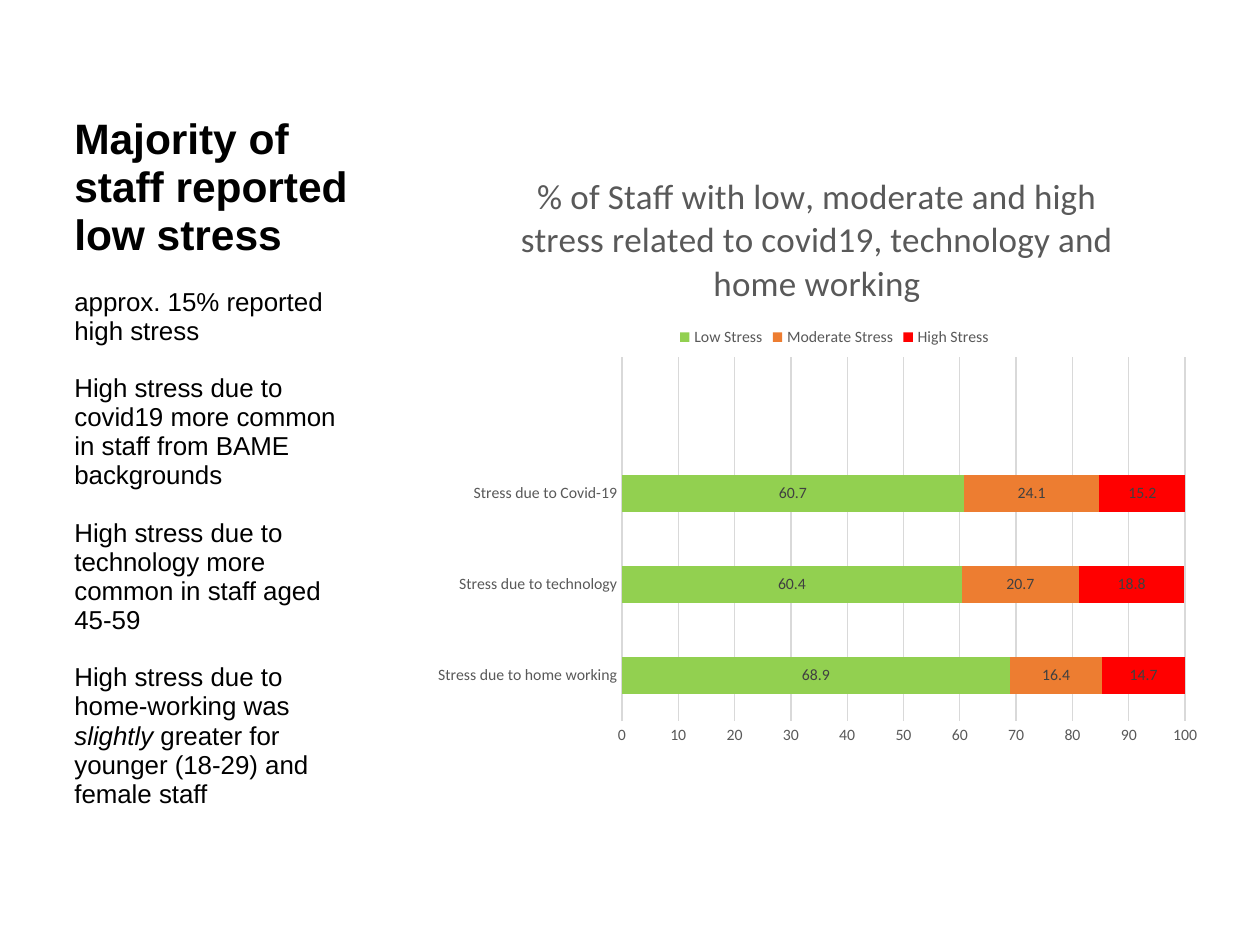
from dataclasses import dataclass

import pptx
import pptx.chart.data
import pptx.dml.color
import pptx.enum.chart
import pptx.enum.text
import pptx.oxml
import pptx.oxml.ns
import pptx.util

Pt = pptx.util.Pt
RGBColor = pptx.dml.color.RGBColor

BLACK = RGBColor(0x00, 0x00, 0x00)
LABEL_GREY = RGBColor(0x40, 0x40, 0x40)
TEXT_GREY = RGBColor(0x59, 0x59, 0x59)
GRID_GREY = RGBColor(0xD9, 0xD9, 0xD9)
GREEN = RGBColor(0x92, 0xD0, 0x50)
ORANGE = RGBColor(0xED, 0x7D, 0x31)
RED = RGBColor(0xFF, 0x00, 0x00)

HEADING_SIZE = 24.3
BODY_SIZE = 14.8
PARAGRAPH_GAP = 16


@dataclass
class StressLevel:
    name: str
    values: tuple
    color: RGBColor


HEADING = "Majority of staff reported low stress"
# Each finding is a list of (text, italic) pieces
FINDINGS = [
    [("approx. 15% reported high stress", False)],
    [("High stress due to covid19 more common in staff from BAME backgrounds", False)],
    [("High stress due to technology more common in staff aged 45-59", False)],
    [("High stress due to home-working was ", False), ("slightly ", True),
     ("greater for younger (18-29) and female staff", False)],
]

CHART_TITLE = ("% of Staff with low, moderate and high stress related to "
               "covid19, technology and home working")
# The empty last category leaves room above the bars
CATEGORIES = ["Stress due to home working", "Stress due to technology",
              "Stress due to Covid-19", ""]
LEVELS = [
    StressLevel("Low Stress", (68.9, 60.4, 60.7, None), GREEN),
    StressLevel("Moderate Stress", (16.4, 20.7, 24.1, None), ORANGE),
    StressLevel("High Stress", (14.7, 18.8, 15.2, None), RED),
]


def format_font(font, size: float, color: RGBColor, name: str = "Calibri",
                bold: bool = False, italic: bool = False) -> None:
    font.size, font.name = Pt(size), name
    font.bold, font.italic = bold, italic
    font.color.rgb = color


def add_text(paragraph, text: str, **font_format) -> None:
    run = paragraph.add_run()
    run.text = text
    format_font(run.font, **font_format)


def make_layout(x: float, y: float, width: float = 0, height: float = 0):
    """Manual chart layout in fractions; a zero size stays automatic."""
    target = '<c:layoutTarget val="inner"/>' if width else ""
    sizes = f'<c:w val="{width}"/><c:h val="{height}"/>' if width else ""
    return pptx.oxml.parse_xml(
        f'<c:layout {pptx.oxml.ns.nsdecls("c")}><c:manualLayout>{target}'
        '<c:xMode val="edge"/><c:yMode val="edge"/>'
        f'<c:x val="{x}"/><c:y val="{y}"/>{sizes}</c:manualLayout></c:layout>')


def fill_findings(title) -> None:
    title.left, title.top, title.width, title.height = Pt(35.3), Pt(62.7), Pt(174.2), Pt(392)
    frame = title.text_frame
    frame.word_wrap = True
    frame.auto_size = pptx.enum.text.MSO_AUTO_SIZE.NONE
    frame.vertical_anchor = pptx.enum.text.MSO_ANCHOR.TOP

    add_text(frame.paragraphs[0], HEADING, size=HEADING_SIZE, color=BLACK,
             name="Arial", bold=True)
    for finding in FINDINGS:
        paragraph = frame.add_paragraph()
        paragraph.space_before = Pt(PARAGRAPH_GAP)
        for text, italic in finding:
            add_text(paragraph, text, size=BODY_SIZE, color=BLACK,
                     name="Arial", italic=italic)
    for paragraph in frame.paragraphs:
        paragraph.alignment = pptx.enum.text.PP_ALIGN.LEFT
        paragraph.line_spacing = 0.94


def format_axis(axis) -> None:
    axis.major_tick_mark = axis.minor_tick_mark = pptx.enum.chart.XL_TICK_MARK.NONE
    format_font(axis.tick_labels.font, 9, TEXT_GREY)


def format_line(line) -> None:
    line.color.rgb = GRID_GREY
    line.width = Pt(0.75)


def add_stress_chart(slide) -> None:
    data = pptx.chart.data.CategoryChartData()
    data.categories = CATEGORIES
    for level in LEVELS:
        data.add_series(level.name, level.values)
    chart = slide.shapes.add_chart(
        pptx.enum.chart.XL_CHART_TYPE.BAR_STACKED,
        Pt(241.2), Pt(83.5), Pt(451.4), Pt(348.5), data).chart
    format_font(chart.font, 10, BLACK)

    # Title and legend
    chart.has_title = True
    add_text(chart.chart_title.text_frame.paragraphs[0], CHART_TITLE,
             size=20, color=TEXT_GREY)
    chart.chart_title.include_in_layout = False
    chart.has_legend = True
    legend = chart.legend
    legend.position = pptx.enum.chart.XL_LEGEND_POSITION.TOP
    legend.include_in_layout = False
    format_font(legend.font, 9, TEXT_GREY)
    legend_position = legend._element.find(pptx.oxml.ns.qn("c:legendPos"))
    legend_position.addnext(make_layout(0.32, 0.29))

    # Plot area
    plot_area = chart._chartSpace.chart.plotArea
    for layout in plot_area.findall(pptx.oxml.ns.qn("c:layout")):
        plot_area.remove(layout)
    plot_area.insert(0, make_layout(0.253, 0.346, 0.713, 0.597))

    # Axes
    format_axis(chart.category_axis)
    format_line(chart.category_axis.format.line)
    value_axis = chart.value_axis
    format_axis(value_axis)
    value_axis.minimum_scale, value_axis.maximum_scale, value_axis.major_unit = 0, 100, 10
    value_axis.format.line.fill.background()
    value_axis.has_major_gridlines = True
    format_line(value_axis.major_gridlines.format.line)

    # Bars and their values
    plot = chart.plots[0]
    plot.gap_width, plot.overlap, plot.vary_by_categories = 150, 100, False
    for series, level in zip(plot.series, LEVELS):
        series.format.fill.solid()
        series.format.fill.fore_color.rgb = level.color
        labels = series.data_labels
        labels.show_value = True
        labels.position = pptx.enum.chart.XL_LABEL_POSITION.CENTER
        format_font(labels.font, 9, LABEL_GREY)


def main() -> None:
    presentation = pptx.Presentation()
    presentation.slide_width, presentation.slide_height = Pt(720), Pt(540)
    slide = presentation.slides.add_slide(presentation.slide_layouts.get_by_name("Title Only"))
    fill_findings(slide.shapes.title)
    add_stress_chart(slide)
    presentation.save("out.pptx")


if __name__ == "__main__":
    main()
